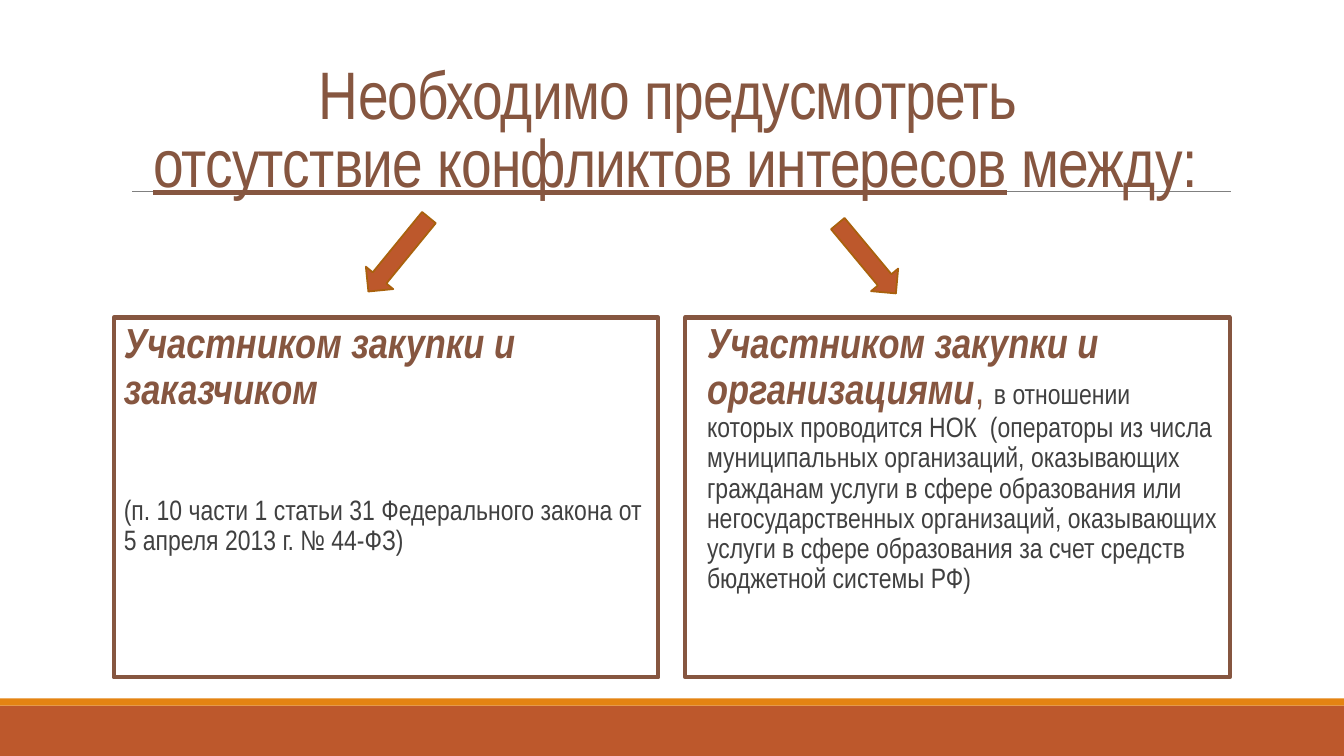
from lxml import etree
from pptx import Presentation
from pptx.dml.color import RGBColor
from pptx.enum.shapes import MSO_CONNECTOR, MSO_SHAPE
from pptx.enum.text import MSO_ANCHOR, MSO_AUTO_SIZE, PP_ALIGN
from pptx.oxml.ns import qn
from pptx.util import Cm, Pt

RECTANGLE = MSO_SHAPE.RECTANGLE
RIGHT_ARROW = MSO_SHAPE.RIGHT_ARROW
STRAIGHT = MSO_CONNECTOR.STRAIGHT
TOP = MSO_ANCHOR.TOP
BOTTOM = MSO_ANCHOR.BOTTOM
LEFT = PP_ALIGN.LEFT
CENTER = PP_ALIGN.CENTER
NO_AUTOFIT = MSO_AUTO_SIZE.NONE

FONT = "Arial Narrow"
BROWN = "865640"
RUST = "BD582C"
ORANGE = "E48312"
GOLD = "A9610D"
GRAY = "808080"
DARK = "404040"
SLIDE_WIDTH = 33.87
HEADING = {"size": 30, "color": BROWN, "bold": True, "italic": True}
DETAIL = {"size": 20, "color": DARK}


def color(value):
    return RGBColor.from_string(value)


def add_text(paragraph, text, size, color, bold=False, italic=False,
             underline=False, spacing=None):
    run = paragraph.add_run()
    run.text = text
    font = run.font
    font.name = FONT
    font.size = Pt(size)
    font.bold = bold
    font.italic = italic
    font.underline = underline
    font.color.rgb = RGBColor.from_string(color)
    if spacing is not None:
        font._element.set("spc", str(round(spacing * 100)))


def add_box(slide, kind, left, top, width, height, fill=None, line=None,
            line_width=1, rotation=0):
    shape = slide.shapes.add_shape(kind, Cm(left), Cm(top), Cm(width), Cm(height))
    shape.shadow.inherit = False
    shape.rotation = rotation
    if fill:
        shape.fill.solid()
        shape.fill.fore_color.rgb = color(fill)
    else:
        shape.fill.background()
    if line:
        shape.line.color.rgb = color(line)
        shape.line.width = Pt(line_width)
    else:
        shape.line.fill.background()
    return shape


def add_rule(slide, left, right, y):
    rule = slide.shapes.add_connector(STRAIGHT, Cm(left), Cm(y), Cm(right), Cm(y))
    rule.line.color.rgb = color(GRAY)
    rule.line.width = Pt(0.5)
    etree.SubElement(rule.element.spPr, qn("a:effectLst"))


def add_title(slide):
    title = slide.shapes.title
    title.left, title.top = Cm(3.05), Cm(0.79)
    title.width, title.height = Cm(27.94), Cm(4.42)
    frame = title.text_frame
    frame.word_wrap = True
    frame.auto_size = NO_AUTOFIT
    frame.vertical_anchor = BOTTOM
    paragraph = frame.paragraphs[0]
    paragraph.alignment = CENTER
    paragraph.line_spacing = 0.85
    style = {"size": 48, "color": BROWN, "spacing": -0.5}
    add_text(paragraph, "Необходимо предусмотреть ", **style)
    paragraph.add_line_break()
    add_text(paragraph, "отсутствие конфликтов интересов", underline=True, **style)
    add_text(paragraph, " между:", **style)
    title.element.getparent().append(title.element)


def add_panel(slide, left, inset, paragraphs):
    panel = add_box(slide, RECTANGLE, left, 8, 13.72, 9.07, line=BROWN, line_width=3)
    frame = panel.text_frame
    frame.word_wrap = True
    frame.vertical_anchor = TOP
    frame.margin_left = Cm(inset + 0.25)
    frame.margin_right = Cm(inset)
    frame.margin_top = frame.margin_bottom = Cm(0.13)
    for index, (space_before, runs) in enumerate(paragraphs):
        paragraph = frame.add_paragraph() if index else frame.paragraphs[0]
        paragraph.alignment = LEFT
        paragraph.line_spacing = 0.9
        paragraph.space_before = Pt(space_before)
        paragraph.space_after = Pt(2)
        for text, style in runs:
            add_text(paragraph, text, **style)


def main():
    presentation = Presentation()
    presentation.slide_width = Cm(SLIDE_WIDTH)
    presentation.slide_height = Cm(19.05)
    slide = presentation.slides.add_slide(presentation.slide_layouts[5])

    add_box(slide, RECTANGLE, 0, 17.78, SLIDE_WIDTH, 1.27, fill=RUST)
    add_box(slide, RECTANGLE, 0, 17.6, SLIDE_WIDTH, 0.18, fill=ORANGE)
    add_rule(slide, 3.33, 31.01, 4.83)
    add_title(slide)

    add_panel(slide, 2.87, 0, [
        (0, [("Участником закупки и заказчиком", HEADING)]),
        (57, [("(п. 10 части 1 статьи 31 Федерального закона от "
               "5 апреля 2013 г. № 44-ФЗ)", DETAIL)]),
    ])
    add_panel(slide, 17.27, 0.3, [
        (0, [("Участником закупки и организациями", HEADING),
             (", ", {"size": 30, "color": BROWN}),
             ("в отношении которых проводится НОК  (операторы из числа "
              "муниципальных организаций, оказывающих гражданам услуги в сфере "
              "образования или негосударственных организаций, оказывающих услуги "
              "в сфере образования за счет средств бюджетной системы РФ)", DETAIL)]),
    ])

    for left, top, width, rotation in ((8.84, 5.97, 2.41, 129.3),
                                       (20.7, 6.07, 2.29, 50.2)):
        add_box(slide, RIGHT_ARROW, left, top, width, 0.89, fill=RUST,
                line=GOLD, line_width=1.25, rotation=rotation)

    presentation.save("out.pptx")


if __name__ == "__main__":
    main()
